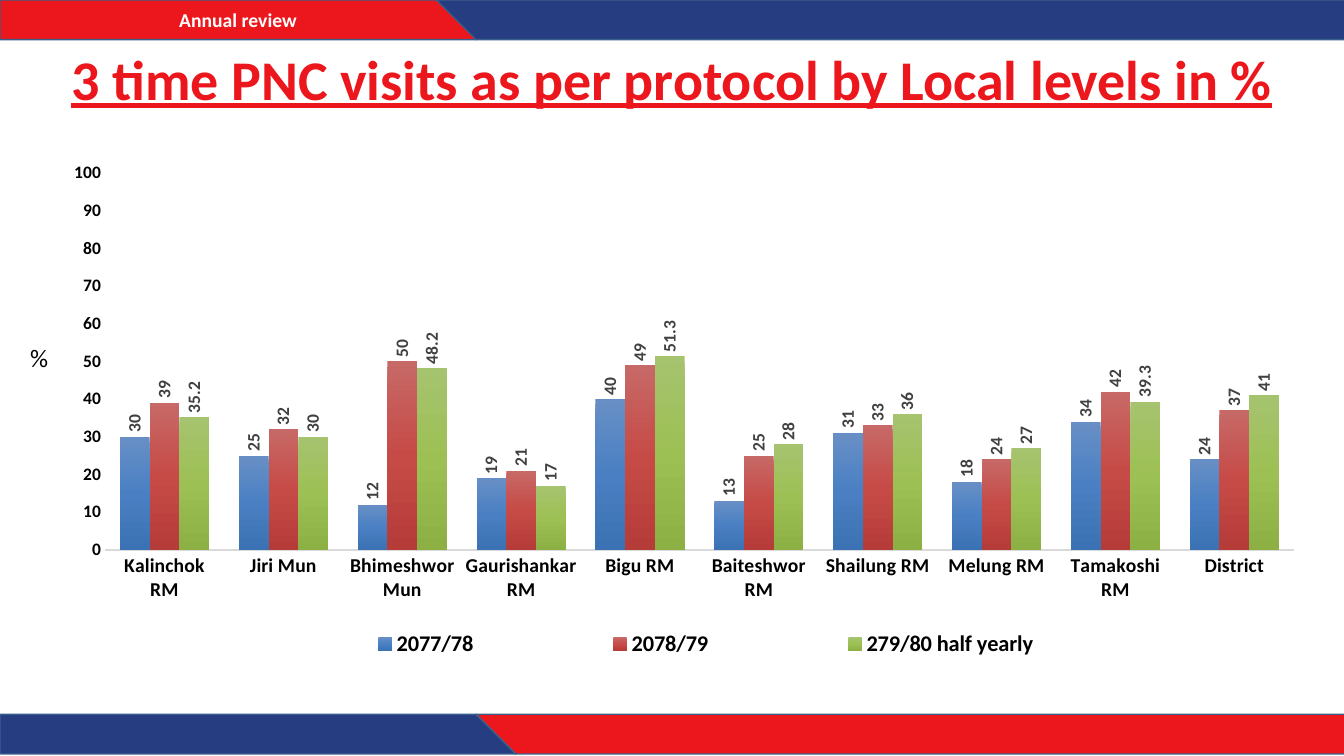
"""Build the slide on three-time PNC visits by local level."""
from pptx import Presentation
from pptx import util as u
from pptx.chart.data import CategoryChartData
from pptx.dml.color import RGBColor
from pptx.enum import chart as ch, text
from pptx.oxml import parse_xml
from pptx.oxml.ns import nsdecls, qn

RED = RGBColor(0xEC, 0x17, 0x1C)
NAVY = RGBColor(0x26, 0x3D, 0x81)
OUTLINE = RGBColor(0x3A, 0x5F, 0x8C)
WHITE = RGBColor(0xFF, 0xFF, 0xFF)
BLACK = RGBColor(0, 0, 0)
LABEL_GREY = RGBColor(0x40, 0x40, 0x40)
AXIS_GREY = RGBColor(0xD9, 0xD9, 0xD9)


def style_font(font, size, color, bold=True):
    font.name = "Calibri"
    font.size = u.Pt(size)
    font.bold = bold
    font.color.rgb = color


def set_layout(element, x, y, width, height, target=""):
    old = element.find(qn("c:layout"))
    if old is not None:
        element.remove(old)
    layout = parse_xml(
        f'<c:layout {nsdecls("c")}><c:manualLayout>{target}'
        '<c:xMode val="edge"/><c:yMode val="edge"/>'
        f'<c:x val="{x}"/><c:y val="{y}"/><c:w val="{width}"/><c:h val="{height}"/>'
        '</c:manualLayout></c:layout>')
    position = element.find(qn("c:legendPos"))
    if position is None:
        element.insert(0, layout)
    else:
        position.addnext(layout)


deck = Presentation()
deck.slide_width, deck.slide_height = u.Cm(33.87), u.Cm(19.05)
page = deck.slides.add_slide(deck.slide_layouts[6])

bands = [
    (RED, "Annual review", [(0.1, 0.1), (11.13, 0.08), (12.29, 0.81), (0.1, 0.81)]),
    (NAVY, "", [(0.1, 17.75), (11.61, 17.78), (12.88, 18.97), (0.1, 18.97)]),
    (RED, "", [(11.91, 17.78), (33.78, 17.75), (33.78, 18.9), (13.16, 18.97)]),
    (NAVY, "", [(11.46, 0.13), (33.78, 0.18), (33.78, 0.84), (12.47, 0.79)]),
]
for color, caption, corners in bands:
    builder = page.shapes.build_freeform(*corners[0], scale=u.Cm(1))
    builder.add_line_segments(corners[1:], close=True)
    band = builder.convert_to_shape()
    band.shadow.inherit = False
    band.fill.solid()
    band.fill.fore_color.rgb = color
    band.line.color.rgb = OUTLINE
    band.line.width = u.Pt(1)
    if caption:
        band.text_frame.text = caption
        band.text_frame.vertical_anchor = text.MSO_ANCHOR.MIDDLE
        para = band.text_frame.paragraphs[0]
        para.alignment = text.PP_ALIGN.CENTER
        style_font(para.runs[0].font, 14, WHITE)

title = page.shapes.add_textbox(u.Cm(0), u.Cm(0.76), u.Cm(33.87), u.Cm(2.62))
title.text_frame.word_wrap = True
title.text_frame.vertical_anchor = text.MSO_ANCHOR.MIDDLE
title.text_frame.text = "3 time PNC visits as per protocol by Local levels in %"
para = title.text_frame.paragraphs[0]
para.alignment = text.PP_ALIGN.CENTER
para.line_spacing = 0.9
style_font(para.runs[0].font, 40, RED)
para.runs[0].font.underline = True

unit = page.shapes.add_textbox(u.Cm(0.51), u.Cm(8.51), u.Cm(1.12), u.Cm(1.02))
unit.text_frame.text = "%"
style_font(unit.text_frame.paragraphs[0].runs[0].font, 18, BLACK, bold=False)

data = CategoryChartData()
data.categories = ["Kalinchok RM", "Jiri Mun", "Bhimeshwor Mun", "Gaurishankar RM", "Bigu RM",
                   "Baiteshwor RM", "Shailung RM", "Melung RM", "Tamakoshi RM", "District"]
years = [
    ("2077/78", [30, 25, 12, 19, 40, 13, 31, 18, 34, 24],
     "#,##0", ("688FC5", "4A80C3", "3B72B3")),
    ("2078/79", [39, 32, 50, 21, 49, 25, 33, 24, 42, 37],
     "#,##0", ("C76967", "C64B47", "B63C39")),
    ("279/80 half yearly", [35.2, 30, 48.2, 17, 51.3, 28, 36, 27, 39.3, 41],
     "General", ("A6C36F", "9DC054", "8DB045")),
]
for name, values, number_format, shades in years:
    data.add_series(name, values)
chart = page.shapes.add_chart(ch.XL_CHART_TYPE.COLUMN_CLUSTERED, u.Cm(1.04), u.Cm(3.38),
                              u.Cm(32.21), u.Cm(13.97), data).chart
chart.has_title = False
style_font(chart.font, 10, BLACK, bold=False)
plot = chart.plots[0]
plot.gap_width, plot.overlap = 100, 0
plot.vary_by_categories = False

for series, (name, values, number_format, shades) in zip(plot.series, years):
    stops = "".join(f'<a:gs pos="{place * 50000}"><a:srgbClr val="{shade}"/></a:gs>'
                    for place, shade in enumerate(shades))
    series.format.fill.background()
    no_fill = series.format.fill._xPr.find(qn("a:noFill"))
    no_fill.getparent().replace(no_fill, parse_xml(
        f'<a:gradFill {nsdecls("a")} rotWithShape="1"><a:gsLst>{stops}</a:gsLst>'
        '<a:lin ang="5400000" scaled="0"/></a:gradFill>'))
    labels = series.data_labels
    labels.show_value = True
    labels.position = ch.XL_LABEL_POSITION.OUTSIDE_END
    labels.number_format = number_format
    labels.number_format_is_linked = False
    style_font(labels.font, 12.5, LABEL_GREY)
    label_body = labels._element.find(qn("c:txPr")).find(qn("a:bodyPr"))
    label_body.set("rot", "-5400000")
    label_body.set("vert", "horz")

for axis, size in ((chart.category_axis, 14), (chart.value_axis, 12.5)):
    axis.has_major_gridlines = False
    axis.major_tick_mark = axis.minor_tick_mark = ch.XL_TICK_MARK.NONE
    style_font(axis.tick_labels.font, size, BLACK)
chart.category_axis.format.line.color.rgb = AXIS_GREY
chart.category_axis.format.line.width = u.Pt(1)
chart.value_axis.format.line.fill.background()
chart.value_axis.minimum_scale, chart.value_axis.maximum_scale = 0, 100
chart.value_axis.major_unit = 10

chart.has_legend = True
chart.legend.position = ch.XL_LEGEND_POSITION.BOTTOM
chart.legend.include_in_layout = False
style_font(chart.legend.font, 16, BLACK)
set_layout(chart.legend._element, 0.16, 0.88, 0.72, 0.08)
plot_area = chart._chartSpace.chart.plotArea
set_layout(plot_area, 0.05, 0.07, 0.93, 0.68, '<c:layoutTarget val="inner"/>')

deck.save("out.pptx")
